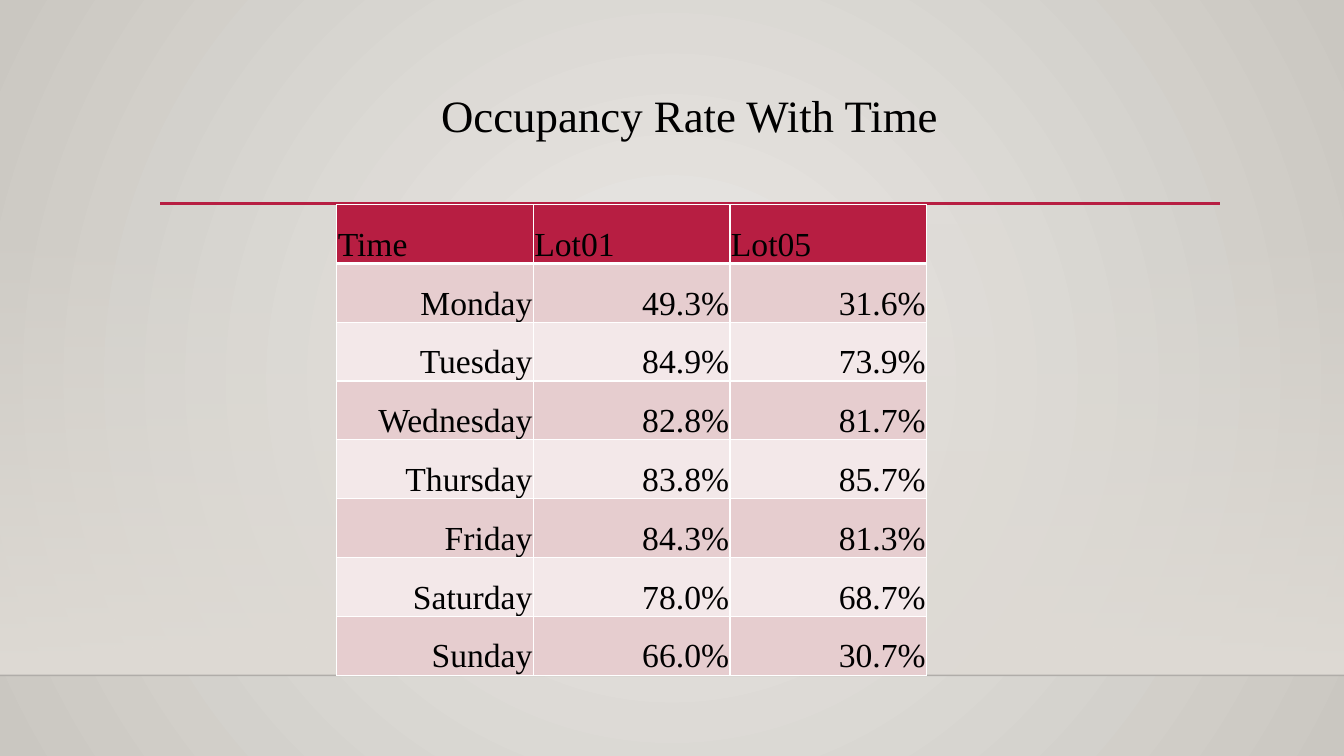
from lxml import etree
from pptx import Presentation
from pptx.dml.color import RGBColor
from pptx.enum.shapes import MSO_CONNECTOR, MSO_SHAPE
from pptx.enum.text import MSO_ANCHOR, PP_ALIGN
from pptx.oxml import parse_xml
from pptx.oxml.ns import nsdecls, qn
from pptx.util import Inches, Pt

TITLE = "Occupancy Rate With Time"
OCCUPANCY = [
    ("Time", "Lot01", "Lot05"),
    ("Monday", "49.3%", "31.6%"),
    ("Tuesday", "84.9%", "73.9%"),
    ("Wednesday", "82.8%", "81.7%"),
    ("Thursday", "83.8%", "85.7%"),
    ("Friday", "84.3%", "81.3%"),
    ("Saturday", "78.0%", "68.7%"),
    ("Sunday", "66.0%", "30.7%"),
]

FONT = "Times New Roman"
BLACK = RGBColor(0x00, 0x00, 0x00)
FLOOR_EDGE = RGBColor(0x00, 0x00, 0x01)
CRIMSON = RGBColor(0xB7, 0x1E, 0x42)
PINK = RGBColor(0xE6, 0xCD, 0xCF)
PALE_PINK = RGBColor(0xF3, 0xE8, 0xE9)
WHITE = RGBColor(0xFF, 0xFF, 0xFF)
LIGHT_STONE = RGBColor(0xEC, 0xEA, 0xE7)
DARK_STONE = RGBColor(0xCA, 0xC7, 0xC1)
WALL = RGBColor(0xDF, 0xDB, 0xD5)

LEFT, CENTER, RIGHT = PP_ALIGN.LEFT, PP_ALIGN.CENTER, PP_ALIGN.RIGHT
TOP, BOTTOM = MSO_ANCHOR.TOP, MSO_ANCHOR.BOTTOM

SLIDE_W, SLIDE_H = 13.33, 7.5
FLOOR_Y = 6.7
TABLE_X, TABLE_Y = 3.34, 2.03
COL_W = 1.95
ROW_H = (FLOOR_Y - TABLE_Y) / len(OCCUPANCY)


def write(frame, text, size, align, spacing=1.0):
    paragraph = frame.paragraphs[0]
    paragraph.alignment = align
    paragraph.line_spacing = spacing
    run = paragraph.add_run()
    run.text = text
    run.font.name = FONT
    run.font.size = Pt(size)
    run.font.bold = False
    run.font.color.rgb = BLACK


def set_gradient(fill, properties, start, end, direction, start_alpha=100):
    """Fill with two stops; direction is the a:lin or a:path element."""
    fill.solid()
    gradient = parse_xml(
        f'<a:gradFill {nsdecls("a")} rotWithShape="1"><a:gsLst>'
        f'<a:gs pos="0"><a:srgbClr val="{start}">'
        f'<a:alpha val="{start_alpha * 1000}"/></a:srgbClr></a:gs>'
        f'<a:gs pos="100000"><a:srgbClr val="{end}"/></a:gs>'
        f'</a:gsLst>{direction}</a:gradFill>')
    properties.replace(properties.find(qn("a:solidFill")), gradient)


def add_rule(slide, x1, x2, y, color, width, alpha=100):
    rule = slide.shapes.add_connector(
        MSO_CONNECTOR.STRAIGHT, Inches(x1), Inches(y), Inches(x2), Inches(y))
    rule.line.color.rgb = color
    rule.line.width = Pt(width)
    properties = rule._element.spPr
    etree.SubElement(properties, qn("a:effectLst"))
    if alpha < 100:
        tint = properties.find(".//" + qn("a:srgbClr"))
        etree.SubElement(tint, qn("a:alpha"), val=str(alpha * 1000))


def set_borders(cell, top, bottom):
    widths = {"lnL": 1, "lnR": 1, "lnT": top, "lnB": bottom}
    for index, (side, width) in enumerate(widths.items()):
        cell._tc.get_or_add_tcPr().insert(index, parse_xml(
            f'<a:{side} {nsdecls("a")} w="{Pt(width)}"><a:solidFill>'
            f'<a:srgbClr val="{WHITE}"/></a:solidFill></a:{side}>'))


def add_backdrop(slide):
    background = slide.background
    set_gradient(
        background.fill, background._cSld.bg.bgPr, LIGHT_STONE, DARK_STONE,
        '<a:path path="circle"><a:fillToRect l="50000" t="50000" '
        'r="50000" b="50000"/></a:path>')
    wall_y = 2.21
    wall = slide.shapes.add_shape(
        MSO_SHAPE.RECTANGLE, 0, Inches(wall_y),
        Inches(SLIDE_W), Inches(FLOOR_Y - wall_y))
    wall.shadow.inherit = False
    wall.line.fill.background()
    set_gradient(wall.fill, wall._element.spPr, WALL, WALL,
                 '<a:lin ang="5400000" scaled="0"/>', start_alpha=0)
    add_rule(slide, 0, SLIDE_W, FLOOR_Y, FLOOR_EDGE, 1, alpha=20)
    add_rule(slide, 1.59, 12.1, 2.02, CRIMSON, 2.5)


def add_title(slide):
    title = slide.shapes.title
    title.left, title.top = Inches(1.59), Inches(0.88)
    title.width, title.height = Inches(10.5), Inches(1.15)
    title.text_frame.vertical_anchor = TOP
    write(title.text_frame, TITLE, 32, CENTER, spacing=0.9)


def add_occupancy_table(slide):
    rows, cols = len(OCCUPANCY), len(OCCUPANCY[0])
    table = slide.shapes.add_table(
        rows, cols, Inches(TABLE_X), Inches(TABLE_Y),
        Inches(COL_W * cols), Inches(ROW_H * rows)).table
    table.horz_banding = False
    for column in table.columns:
        column.width = Inches(COL_W)
    for r, values in enumerate(OCCUPANCY):
        table.rows[r].height = Inches(ROW_H)
        is_header = r == 0
        row_fill = CRIMSON if is_header else PINK if r % 2 else PALE_PINK
        for c, value in enumerate(values):
            cell = table.cell(r, c)
            cell.margin_left = cell.margin_right = cell.margin_top = Inches(0.01)
            cell.margin_bottom = 0
            cell.vertical_anchor = BOTTOM
            cell.fill.solid()
            cell.fill.fore_color.rgb = row_fill
            set_borders(cell, top=3 if r == 1 else 1, bottom=3 if is_header else 1)
            write(cell.text_frame, value, 24, LEFT if is_header else RIGHT)


def main():
    prs = Presentation()
    prs.slide_width, prs.slide_height = Inches(SLIDE_W), Inches(SLIDE_H)
    slide = prs.slides.add_slide(prs.slide_layouts.get_by_name("Title Only"))
    add_backdrop(slide)
    add_title(slide)
    add_occupancy_table(slide)
    prs.save("out.pptx")


if __name__ == "__main__":
    main()
